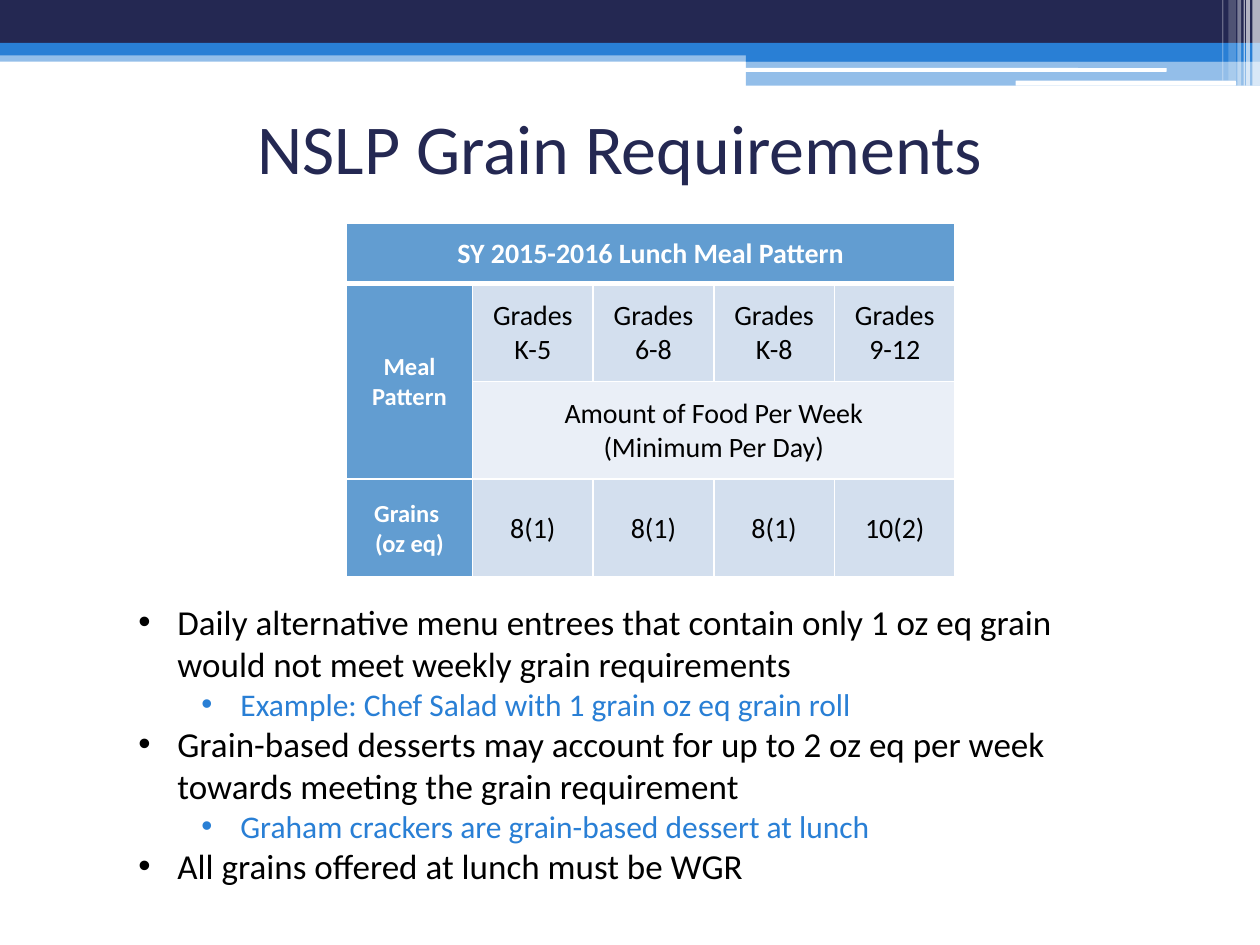
from lxml import etree
from pptx import Presentation
from pptx import util as u
from pptx.dml.color import RGBColor
from pptx.enum import shapes, text
from pptx.oxml import ns

FONT = "Calibri"
HUES = {"navy": "242852", "blue": "297FD5", "white": "FFFFFF", "black": "000000",
        "head": "629DD1", "band": "D3DFEE", "pale": "EAEFF7"}
BARS = [(0, 0.4, 10, 0.09, "blue", 50), (0, 0, 10, 0.34, "navy", 100),
        (0, 0.34, 10, 0.1, "blue", 100), (5.92, 0.39, 4.08, 0.1, "blue", 100),
        (5.92, 0.48, 4.08, 0.2, "blue", 50)]
RULES = [(5.91, 0.54, 3.35, 0.03), (8.06, 0.64, 1.75, 0.04)]
STRIPES = [(9.94, 0.06, 0.68, 65), (9.89, 0.03, 0.68, 65), (9.87, 0.01, 0.68, 60),
           (9.82, 0.03, 0.68, 40), (9.75, 0.06, 0.64, 20), (9.7, 0.01, 0.64, 30)]
ROWS = [["SY 2015-2016 Lunch Meal Pattern", "", "", "", ""],
        ["Meal Pattern", "Grades K-5", "Grades 6-8", "Grades K-8", "Grades 9-12"],
        ["", "Amount of Food Per Week\n(Minimum Per Day)", "", "", ""],
        ["Grains \v(oz eq)", "8(1)", "8(1)", "8(1)", "10(2)"]]
POINTS = [
    (0, "Daily alternative menu entrees that contain only 1 oz eq grain would not meet weekly grain requirements"),
    (1, "Example: Chef Salad with 1 grain oz eq grain roll"),
    (0, "Grain-based desserts may account for up to 2 oz eq per week towards meeting the grain requirement"),
    (1, "Graham crackers are grain-based dessert at lunch"),
    (0, "All grains offered at lunch must be WGR")]


def rgb(name):
    """Return the named colour."""
    return RGBColor.from_string(HUES[name])


def style(para, size, hue, bold=False):
    """Format every run of a paragraph."""
    for run in para.runs:
        run.font.name, run.font.size, run.font.bold = FONT, u.Pt(size), bold
        run.font.color.rgb = rgb(hue)


def add_bar(slide, box, hue, alpha=100, kind=shapes.MSO_SHAPE.RECTANGLE):
    """Add a plain filled bar with the given opacity."""
    bar = slide.shapes.add_shape(kind, *map(u.Inches, box))
    bar.shadow.inherit = False
    bar.fill.solid()
    bar.fill.fore_color.rgb = rgb(hue)
    bar.line.fill.background()
    if alpha < 100:
        tint = bar.fill._xPr.find(".//" + ns.qn("a:srgbClr"))
        etree.SubElement(tint, ns.qn("a:alpha"), val=str(alpha * 1000))


def add_banner(slide, left, top):
    """Draw the bars, rules and stripes along the top edge."""
    for x, y, wide, high, hue, alpha in BARS:
        add_bar(slide, (left + x, top + y, wide, high), hue, alpha)
    for x, y, wide, high in RULES:
        add_bar(slide, (left + x, top + y, wide, high), "white",
                kind=shapes.MSO_SHAPE.ROUNDED_RECTANGLE)
    for x, wide, high, alpha in STRIPES:
        add_bar(slide, (left + x, top, wide, high), "white", alpha)


def set_title(slide, box, words):
    """Place and format the title."""
    title = slide.shapes.title
    title.left, title.top, title.width, title.height = map(u.Inches, box)
    frame = title.text_frame
    frame.text = words
    frame.vertical_anchor = text.MSO_ANCHOR.MIDDLE
    frame.paragraphs[0].alignment = text.PP_ALIGN.CENTER
    style(frame.paragraphs[0], 40, "navy")


def add_edges(cell, base):
    """Give a cell white borders, with its own bottom width."""
    props = cell._tc.get_or_add_tcPr()
    for spot, (side, points) in enumerate([("L", 1), ("R", 1), ("T", 1), ("B", base)]):
        line = etree.Element(ns.qn("a:ln" + side), w=str(u.Pt(points)))
        fill = etree.SubElement(line, ns.qn("a:solidFill"))
        etree.SubElement(fill, ns.qn("a:srgbClr"), val=HUES["white"])
        props.insert(spot, line)


def fill_cell(cell, words, row, col):
    """Write and format one table cell by its place."""
    head = row == 0 or col == 0
    cell.text = words
    cell.vertical_anchor = text.MSO_ANCHOR.MIDDLE
    cell.margin_left = cell.margin_right = u.Inches(0.07)
    cell.margin_top, cell.margin_bottom = u.Inches(0.01), 0
    cell.fill.solid()
    cell.fill.fore_color.rgb = rgb("head" if head else "pale" if row == 2 else "band")
    add_edges(cell, 3 if row == 0 else 1)
    for para in cell.text_frame.paragraphs:
        para.alignment = text.PP_ALIGN.CENTER
        style(para, 14 if row and col == 0 else 16, "white" if head else "black", head)


def add_meals(slide, box):
    """Add the meal pattern table."""
    table = slide.shapes.add_table(4, 5, *map(u.Inches, box)).table
    for col, wide in zip(table.columns, [1] + [(box[2] - 1) / 4] * 4):
        col.width = u.Inches(wide)
    for row, high in zip(table.rows, [0.48] + [(box[3] - 0.48) / 3] * 3):
        row.height = u.Inches(high)
    for i, row in enumerate(ROWS):
        for j, words in enumerate(row):
            fill_cell(table.cell(i, j), words, i, j)
    for start, end in [((0, 0), (0, 4)), ((1, 0), (2, 0)), ((2, 1), (2, 4))]:
        table.cell(*start).merge(table.cell(*end))


def add_points(slide, box):
    """Add the two-level bullet list."""
    frame = slide.shapes.add_textbox(*map(u.Inches, box)).text_frame
    frame.word_wrap = True
    frame.text = "\n".join(words for _, words in POINTS)
    for para, (level, _) in zip(frame.paragraphs, POINTS):
        para.level = level
        style(para, 18 if level else 20, "blue" if level else "black")
        props = para._p.get_or_add_pPr()
        props.set("marL", str(u.Inches(0.31 + level / 2)))
        props.set("indent", str(u.Inches(-0.31)))
        etree.SubElement(props, ns.qn("a:buFont"), typeface="Arial")
        etree.SubElement(props, ns.qn("a:buChar"), char="•")


def main():
    """Build and save the slide."""
    deck = Presentation()
    deck.slide_width, deck.slide_height = u.Inches(10), u.Inches(7.5)
    slide = deck.slides.add_slide(deck.slide_layouts[5])
    add_banner(slide, 0, 0)
    set_title(slide, (0.42, 0.58, 9, 1.17), "NSLP Grain Requirements")
    add_meals(slide, (2.75, 1.77, 4.83, 2.81))
    add_points(slide, (1, 4.72, 8, 2.69))
    deck.save("out.pptx")


if __name__ == "__main__":
    main()
